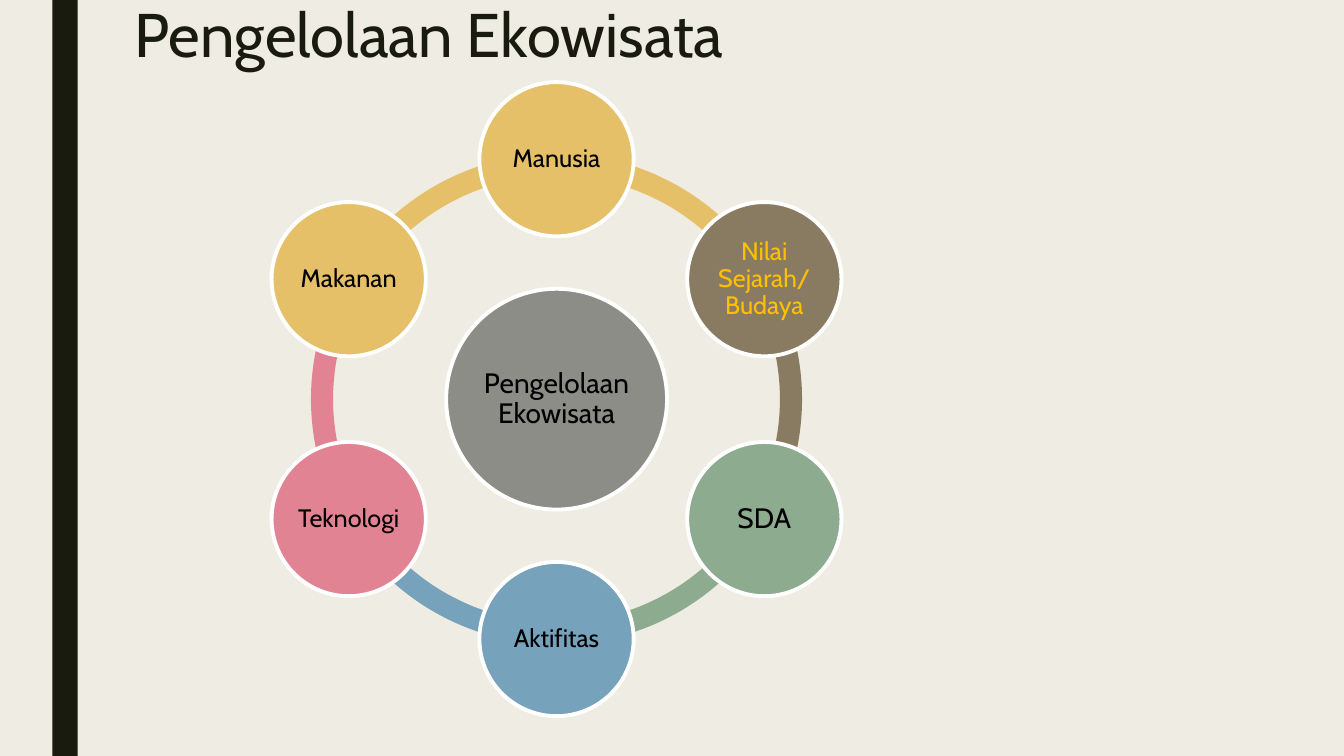
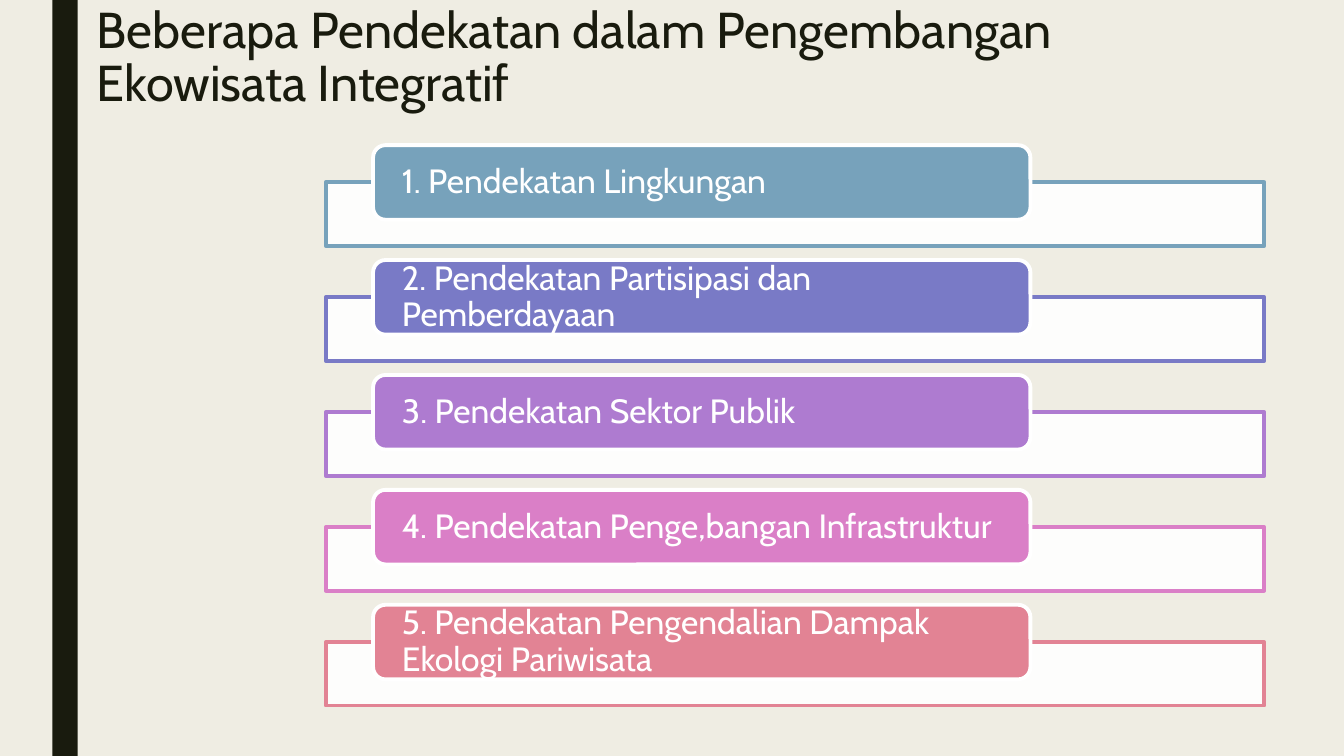
import math

from lxml import etree
from pptx import Presentation
from pptx.dml.color import RGBColor
from pptx.enum import shapes, text
from pptx.oxml.ns import qn
from pptx.util import Inches, Pt

FONT = "Cabin"
COLORS = {
    "paper": "EFEDE3", "ink": "191B0E", "white": "FFFFFF", "black": "000000",
    "amber": "FFC000", "gold": "E6C069", "brown": "897B61", "green": "8DAB8E",
    "blue": "77A2BB", "rose": "E28394", "gray": "8C8D86", "indigo": "797AC6",
    "purple": "AE7BD0", "pink": "DA7FC7",
}
SHAPE = shapes.MSO_SHAPE


def rgb(name):
    return RGBColor.from_string(COLORS[name])


class Deck:
    def __init__(self):
        self.prs = Presentation()
        self.prs.slide_width = Inches(13.33)
        self.prs.slide_height = Inches(7.5)
        fill = self.prs.slide_master.background.fill
        fill.solid()
        fill.fore_color.rgb = rgb("paper")
        self.s = None

    def slide(self, title, left, size):
        self.s = self.prs.slides.add_slide(self.prs.slide_layouts[5])
        self.shape(SHAPE.RECTANGLE, 0.52, 0, 0.25, 7.5, "ink")
        sp = self.s.shapes.title
        sp.left, sp.top = Inches(left), Inches(0)
        sp.width, sp.height = Inches(10.5), Inches(1.62)
        self.set_text(sp, title, size, "ink", text.PP_ALIGN.LEFT, 0.89)
        sp.text_frame.vertical_anchor = text.MSO_ANCHOR.TOP

    def shape(self, kind, left, top, width, height, fill, line=None):
        sp = self.s.shapes.add_shape(
            kind, Inches(left), Inches(top), Inches(width), Inches(height))
        sp.shadow.inherit = False
        sp.fill.solid()
        sp.fill.fore_color.rgb = rgb(fill)
        if line:
            sp.line.color.rgb = rgb(line)
            sp.line.width = Pt(2.75)
        else:
            sp.line.fill.background()
        return sp

    def set_text(self, sp, words, size, color, align, spacing=0.9, insets=None):
        tf = sp.text_frame
        tf.text = words
        tf.word_wrap = True
        tf.auto_size = text.MSO_AUTO_SIZE.NONE
        tf.vertical_anchor = text.MSO_ANCHOR.MIDDLE
        if insets:
            side, edge = insets
            tf.margin_left = tf.margin_right = Inches(side)
            tf.margin_top = tf.margin_bottom = Inches(edge)
        p = tf.paragraphs[0]
        p.alignment = align
        p.line_spacing = spacing
        font = p.runs[0].font
        font.name, font.size = FONT, Pt(size)
        font.color.rgb = rgb(color)

    def circle(self, x, y, size, fill, words, font_size, color="black"):
        sp = self.shape(SHAPE.OVAL, x - size / 2, y - size / 2, size, size, fill, "white")
        self.set_text(sp, words, font_size, color, text.PP_ALIGN.CENTER, insets=(0.03, 0.03))

    def arc(self, x, y, size, start, end, fill):
        sp = self.shape(SHAPE.BLOCK_ARC, x - size / 2, y - size / 2, size, size, fill)
        for i, value in enumerate((start * 0.6, end * 0.6, 0.045)):
            sp.adjustments[i] = value

    def frame(self, left, top, width, height, line):
        sp = self.shape(SHAPE.RECTANGLE, left, top, width, height, "white", line)
        color = sp.element.spPr.find(qn("a:solidFill"))[0]
        etree.SubElement(color, qn("a:alpha")).set("val", "90000")

    def label(self, left, top, width, height, fill, words):
        sp = self.shape(SHAPE.ROUNDED_RECTANGLE, left, top, width, height, fill, "white")
        self.set_text(sp, words, 24, "white", text.PP_ALIGN.LEFT, insets=(0.25, 0))


def management_slide(deck):
    deck.slide("Pengelolaan Ekowisata", 1.23, 44)
    x, y, radius = 5.52, 3.96, 2.38
    nodes = [
        ("Manusia", "gold", 18, "black"),
        ("Nilai Sejarah/Budaya", "brown", 18, "amber"),
        ("SDA", "green", 20, "black"),
        ("Aktifitas", "blue", 18, "black"),
        ("Teknologi", "rose", 18, "black"),
        ("Makanan", "gold", 18, "black"),
    ]
    step = 360 // len(nodes)
    angles = [(270 + i * step) % 360 for i in range(len(nodes))]
    for angle, node in zip(angles, nodes):
        deck.arc(x, y, 4.87, angle, (angle + step) % 360, node[1])
    deck.circle(x, y, 2.19, "gray", "Pengelolaan Ekowisata", 20)
    for angle, (words, fill, size, color) in zip(angles, nodes):
        turn = math.radians(angle)
        deck.circle(x + radius * math.cos(turn), y + radius * math.sin(turn),
                    1.53, fill, words, size, color)


def approaches_slide(deck):
    deck.slide("Beberapa Pendekatan dalam Pengembangan Ekowisata Integratif", 0.86, 36)
    approaches = [
        ("1. Pendekatan Lingkungan", "blue"),
        ("2. Pendekatan Partisipasi dan Pemberdayaan", "indigo"),
        ("3. Pendekatan Sektor Publik", "purple"),
        ("4. Pendekatan Penge,bangan Infrastruktur", "pink"),
        ("5. Pendekatan Pengendalian Dampak Ekologi Pariwisata", "rose"),
    ]
    for i, (words, color) in enumerate(approaches):
        top = 1.44 + i * 1.14
        deck.frame(3.23, top + 0.37, 9.31, 0.63, color)
        deck.label(3.7, top, 6.52, 0.74, color, words)


def main():
    deck = Deck()
    management_slide(deck)
    approaches_slide(deck)
    deck.prs.save("out.pptx")


if __name__ == "__main__":
    main()
